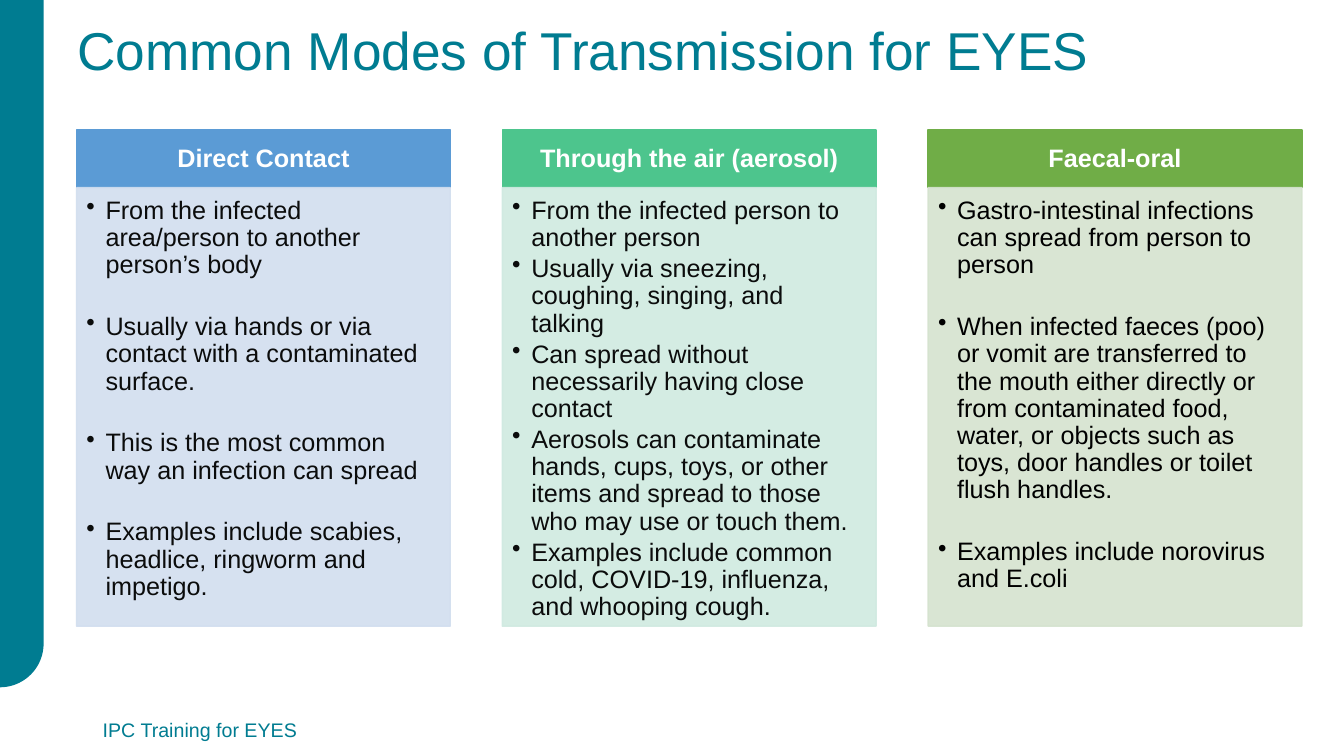
"""Build the slide on common modes of transmission for EYES."""
from dataclasses import dataclass
from math import cos, pi, sin

from lxml import etree
from pptx import Presentation
from pptx.dml.color import RGBColor
from pptx.enum import shapes, text
from pptx.oxml import ns
from pptx.util import Cm, Pt

TEAL = RGBColor(0x00, 0x7C, 0x91)
WHITE = RGBColor(0xFF, 0xFF, 0xFF)
INK = RGBColor(0x0B, 0x0C, 0x0C)
BLACK = RGBColor(0x00, 0x00, 0x00)
BLUE = RGBColor(0x5B, 0x9B, 0xD5)
PALE_BLUE = RGBColor(0xD2, 0xDE, 0xEF)
MINT = RGBColor(0x4D, 0xC5, 0x8D)
PALE_MINT = RGBColor(0xD0, 0xEA, 0xE1)
GREEN = RGBColor(0x70, 0xAD, 0x47)
PALE_GREEN = RGBColor(0xD5, 0xE3, 0xCF)

FONT = "Arial"
LEFT, PITCH, WIDTH = 1.93, 10.73, 9.42
HEAD_TOP, HEAD_HEIGHT, BODY_HEIGHT = 3.28, 1.45, 11.05
TIGHT, LOOSE = 2.7, 24.7


@dataclass
class Mode:
    """One mode of transmission and its column styling."""
    heading: str
    points: list[str]
    head_color: RGBColor
    body_color: RGBColor
    text_color: RGBColor
    gap: float


MODES = [
    Mode("Direct Contact", [
        "From the infected area/person to another person’s body",
        "Usually via hands or via contact with a contaminated surface.",
        "This is the most common way an infection can spread",
        "Examples include scabies, headlice, ringworm and impetigo.",
    ], BLUE, PALE_BLUE, INK, LOOSE),
    Mode("Through the air (aerosol)", [
        "From the infected person to another person",
        "Usually via sneezing, coughing, singing, and talking",
        "Can spread without necessarily having close contact",
        "Aerosols can contaminate hands, cups, toys, or other items and spread "
        "to those who may use or touch them.",
        "Examples include common cold, COVID-19, influenza, and whooping cough.",
    ], MINT, PALE_MINT, INK, TIGHT),
    Mode("Faecal-oral", [
        "Gastro-intestinal infections can spread from person to person",
        "When infected faeces (poo) or vomit are transferred to the mouth either "
        "directly or from contaminated food, water, or objects such as toys, "
        "door handles or toilet flush handles.",
        "Examples include norovirus and E.coli",
    ], GREEN, PALE_GREEN, BLACK, LOOSE),
]


def style(paragraph, size: float, color: RGBColor, bold: bool = False) -> None:
    """Set the font of a whole paragraph."""
    font = paragraph.font
    font.name, font.size, font.bold = FONT, Pt(size), bold
    font.color.rgb = color


def add_bullet(paragraph) -> None:
    """Give a paragraph a hanging round bullet."""
    props = paragraph._p.get_or_add_pPr()
    props.set("marL", str(Cm(0.48)))
    props.set("indent", str(-Cm(0.48)))
    etree.SubElement(props, ns.qn("a:buChar")).set("char", "•")


def add_label(slide, box: tuple[float, ...], words: str, size: float,
              anchor, spacing: float) -> None:
    """Add a single teal line of text."""
    frame = slide.shapes.add_textbox(*map(Cm, box)).text_frame
    frame.word_wrap = True
    frame.vertical_anchor = anchor
    line = frame.paragraphs[0]
    line.text = words
    line.line_spacing = spacing
    style(line, size, TEAL)


def add_panel(slide, box: tuple[float, ...], color: RGBColor,
              insets: tuple[float, ...], anchor, opacity: int = 100):
    """Add a filled rectangle and return its text frame."""
    panel = slide.shapes.add_shape(shapes.MSO_SHAPE.RECTANGLE, *map(Cm, box))
    panel.shadow.inherit = False
    panel.fill.solid()
    panel.fill.fore_color.rgb = color
    panel.line.color.rgb = color
    panel.line.width = Pt(1)
    if opacity < 100:
        for tint in panel._element.spPr.iter(ns.qn("a:srgbClr")):
            etree.SubElement(tint, ns.qn("a:alpha")).set("val", str(opacity * 1000))
    frame = panel.text_frame
    frame.word_wrap = True
    frame.vertical_anchor = anchor
    (frame.margin_left, frame.margin_top,
     frame.margin_right, frame.margin_bottom) = map(Cm, insets)
    return frame


def add_mode(slide, left: float, mode: Mode) -> None:
    """Add the heading and bulleted panel of one mode."""
    head = add_panel(slide, (left, HEAD_TOP, WIDTH, HEAD_HEIGHT), mode.head_color,
                     (0.36, 0.2, 0.36, 0.2), text.MSO_ANCHOR.MIDDLE)
    heading = head.paragraphs[0]
    heading.text = mode.heading
    heading.alignment = text.PP_ALIGN.CENTER
    heading.line_spacing = 0.9
    style(heading, 18, WHITE, bold=True)

    body = add_panel(slide, (left, HEAD_TOP + HEAD_HEIGHT, WIDTH, BODY_HEIGHT),
                     mode.body_color, (0.25, 0.25, 0.36, 0.4),
                     text.MSO_ANCHOR.TOP, opacity=90)
    for index, words in enumerate(mode.points):
        point = body.add_paragraph() if index else body.paragraphs[0]
        point.text = words
        point.alignment = text.PP_ALIGN.LEFT
        point.line_spacing = 0.9
        point.space_after = Pt(mode.gap if index < len(mode.points) - 1 else 0)
        add_bullet(point)
        style(point, 18, mode.text_color)


def add_sidebar(slide, width: float, height: float, steps: int = 24) -> None:
    """Add the teal band with its rounded lower right corner."""
    angles = [pi / 2 * step / steps for step in range(steps + 1)]
    corner = [(Cm(width * cos(a)), Cm(height - width + width * sin(a))) for a in angles]
    outline = slide.shapes.build_freeform(0, 0)
    outline.add_line_segments([(Cm(width), 0), *corner])
    band = outline.convert_to_shape()
    band.shadow.inherit = False
    band.fill.solid()
    band.fill.fore_color.rgb = TEAL
    band.line.fill.background()


def main() -> None:
    """Build and save the slide."""
    deck = Presentation()
    deck.slide_width, deck.slide_height = Cm(33.87), Cm(19.05)
    slide = deck.slides.add_slide(deck.slide_layouts[6])
    add_sidebar(slide, 1.1, 17.32)
    add_label(slide, (1.7, 0.5, 30.9, 2.7), "Common Modes of Transmission for EYES",
              38, text.MSO_ANCHOR.TOP, 0.9)
    for column, mode in enumerate(MODES):
        add_mode(slide, LEFT + column * PITCH, mode)
    add_label(slide, (2.34, 17.88, 27.8, 1.02), "IPC Training for EYES",
              14, text.MSO_ANCHOR.MIDDLE, 1)
    deck.save("out.pptx")


if __name__ == "__main__":
    main()
